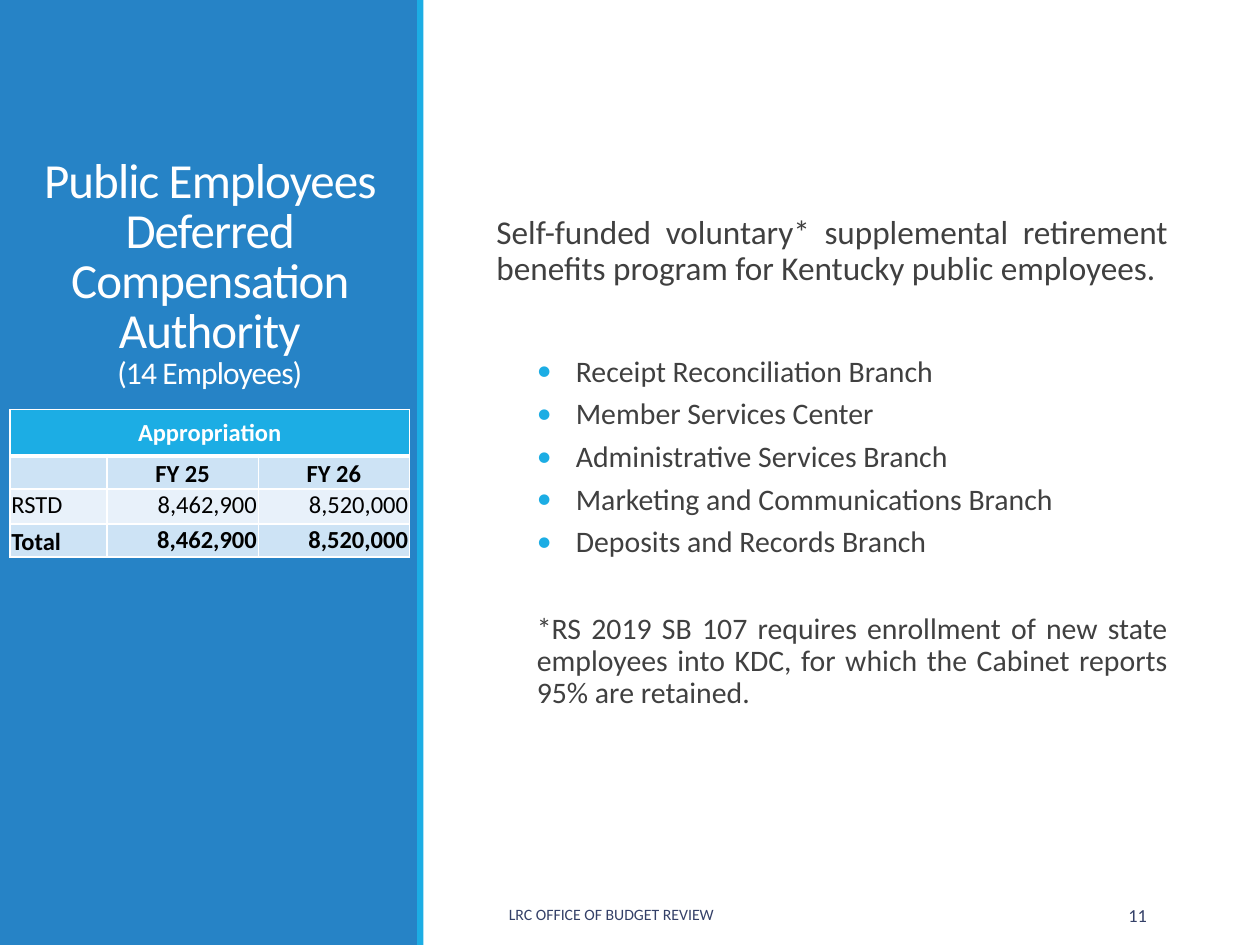
from lxml import etree
from pptx import Presentation
from pptx.dml.color import RGBColor
from pptx.enum import shapes, text
from pptx.oxml import ns
from pptx import util as u

WIDTH, HEIGHT = u.Inches(10), u.Inches(7.5)
COLUMNS, ROWS = 100, 75
FONT = "Calibri"
COLORS = {
    "panel": "2683C6", "accent": "1CADE4", "white": "FFFFFF", "black": "000000",
    "body": "404040", "footer": "344068", "band": "CDE3F5", "light": "E8F1FA",
}
ALIGN, ANCHOR = text.PP_ALIGN, text.MSO_ANCHOR

TITLE = "Public Employees Deferred Compensation Authority"
STAFF = "(14 Employees)"
INTRO = ("Self-funded voluntary* supplemental retirement benefits program "
         "for Kentucky public employees.")
BRANCHES = [
    "Receipt Reconciliation Branch",
    "Member Services Center",
    "Administrative Services Branch",
    "Marketing and Communications Branch",
    "Deposits and Records Branch",
]
NOTE = ("*RS 2019 SB 107 requires enrollment of new state employees into KDC, "
        "for which the Cabinet reports 95% are retained.")
APPROPRIATION = [
    ["Appropriation", "", ""],
    ["", "FY 25", "FY 26"],
    ["RSTD", "8,462,900", "8,520,000"],
    ["Total", "8,462,900", "8,520,000"],
]


def across(columns):
    return round(WIDTH * columns / COLUMNS)


def down(rows):
    return round(HEIGHT * rows / ROWS)


def area(left, top, width, height):
    return across(left), down(top), across(width), down(height)


def place(shape, *grid):
    shape.left, shape.top, shape.width, shape.height = area(*grid)


def rgb(name):
    return RGBColor.from_string(COLORS[name])


def add_xml(parent, tag, **attributes):
    return etree.SubElement(parent, ns.qn(tag), attributes)


def format_span(span, size, color, bold=False):
    span.font.name, span.font.size = FONT, u.Pt(size)
    span.font.bold = bold
    span.font.color.rgb = rgb(color)


def add_panel(page, color, *grid):
    panel = page.shapes.add_shape(shapes.MSO_SHAPE.RECTANGLE, *area(*grid))
    panel.shadow.inherit = False
    panel.fill.solid()
    panel.fill.fore_color.rgb = rgb(color)
    panel.line.fill.background()
    return panel


def fill_title(title):
    place(title, 0, 6.5, 33.3, 25)
    frame = title.text_frame
    frame.text = f"{TITLE}\v{STAFF}"
    frame.auto_size = text.MSO_AUTO_SIZE.NONE
    frame.vertical_anchor = ANCHOR.BOTTOM
    para = frame.paragraphs[0]
    para.alignment, para.line_spacing = ALIGN.CENTER, 0.85
    for span, size in zip(para.runs, (28, 18)):
        format_span(span, size, "white")
        span.font._element.set("spc", "-50")
    # The line break takes the size of the line it ends
    add_xml(para._p.find(ns.qn("a:br")), "a:rPr", sz="2800")


def format_body_para(para, size, before, after, margin=0.0, hanging=0.0):
    para.alignment, para.line_spacing = ALIGN.JUSTIFY, 0.9
    para.space_before, para.space_after = u.Pt(before), u.Pt(after)
    format_span(para.runs[0], size, "body")
    props = para._p.get_or_add_pPr()
    props.set("marL", str(u.Inches(margin)))
    props.set("indent", str(-u.Inches(hanging)))
    if hanging:
        add_xml(add_xml(props, "a:buClr"), "a:srgbClr", val=COLORS["accent"])
        add_xml(props, "a:buFont", typeface=FONT)
        add_xml(props, "a:buChar", char="•")
    else:
        add_xml(props, "a:buNone")


def fill_body(body):
    place(body, 39.4, 8, 53.3, 57.5)
    frame = body.text_frame
    frame.text = "\n".join([INTRO, *BRANCHES, NOTE])
    frame.auto_size = text.MSO_AUTO_SIZE.NONE
    frame.vertical_anchor = ANCHOR.MIDDLE
    frame.margin_left = frame.margin_right = 0
    intro, *branches, note = frame.paragraphs
    format_body_para(intro, 19, 12, 2)
    for index, branch in enumerate(branches):
        branch.level = 1
        format_body_para(branch, 17, 2 if index else 37, 4, 0.63, 0.31)
    note.level = 1
    format_body_para(note, 17, 27, 4, 0.32)


def add_label(page, words, size, align, *grid):
    box = page.shapes.add_textbox(*area(*grid))
    frame = box.text_frame
    frame.word_wrap = True
    frame.text = words
    frame.vertical_anchor = ANCHOR.MIDDLE
    para = frame.paragraphs[0]
    para.alignment = align
    format_span(para.runs[0], size, "footer")


def set_borders(cell, top, bottom):
    props = cell._tc.get_or_add_tcPr()
    widths = {"a:lnL": 1, "a:lnR": 1, "a:lnT": top, "a:lnB": bottom}
    for index, (tag, width) in enumerate(widths.items()):
        line = add_xml(props, tag, w=str(u.Pt(width)))
        add_xml(add_xml(line, "a:solidFill"), "a:srgbClr", val=COLORS["white"])
        props.insert(index, line)


def fill_cell(cell, words, fill, color, bold, align, anchor):
    cell.fill.solid()
    cell.fill.fore_color.rgb = rgb(fill)
    cell.margin_left = cell.margin_right = cell.margin_top = u.Inches(0.01)
    cell.margin_bottom = 0
    cell.vertical_anchor = anchor
    para = cell.text_frame.paragraphs[0]
    para.alignment = align
    if words:
        para.text = words
        format_span(para.runs[0], 14, color, bold)
    else:
        add_xml(para._p, "a:endParaRPr", sz="1400")


def add_appropriation(page):
    widths, heights = [7.7, 12, 12], [3.7, 2.6, 2.8, 2.6]
    table = page.shapes.add_table(
        len(heights), len(widths),
        *area(0.8, 32.5, sum(widths), sum(heights))).table
    for column, width in zip(table.columns, widths):
        column.width = across(width)
    for row, height in zip(table.rows, heights):
        row.height = down(height)

    fills = ["accent", "band", "light", "band"]
    anchors = [ANCHOR.MIDDLE, ANCHOR.BOTTOM, ANCHOR.TOP, ANCHOR.TOP]
    for r, row in enumerate(APPROPRIATION):
        for c, words in enumerate(row):
            cell = table.cell(r, c)
            align = ALIGN.CENTER if r < 2 else ALIGN.RIGHT if c else ALIGN.LEFT
            anchor = ANCHOR.BOTTOM if words == "Total" else anchors[r]
            fill_cell(cell, words, fills[r], "black" if r else "white",
                      r != 2, align, anchor)
            set_borders(cell, 3 if r == 1 else 1, 3 if r == 0 else 1)
    table.cell(0, 0).merge(table.cell(0, 2))


def main():
    deck = Presentation()
    deck.slide_width, deck.slide_height = WIDTH, HEIGHT
    page = deck.slides.add_slide(deck.slide_layouts[1])

    # Side panel and its edge, behind the title
    panels = [add_panel(page, "panel", 0, 0, 33.2, ROWS),
              add_panel(page, "accent", 33.1, 0, 0.5, ROWS)]
    for index, panel in enumerate(panels, start=2):
        page.shapes._spTree.insert(index, panel._element)

    # Title, body and table
    fill_title(page.shapes.title)
    fill_body(page.placeholders[1])
    add_appropriation(page)

    # Footer
    add_label(page, "LRC OFFICE OF BUDGET REVIEW", 9, ALIGN.LEFT,
              39.4, 70.6, 38.1, 4)
    add_label(page, "11", 10.5, ALIGN.RIGHT, 81.2, 70.6, 10.8, 4)

    deck.save("out.pptx")


if __name__ == "__main__":
    main()
